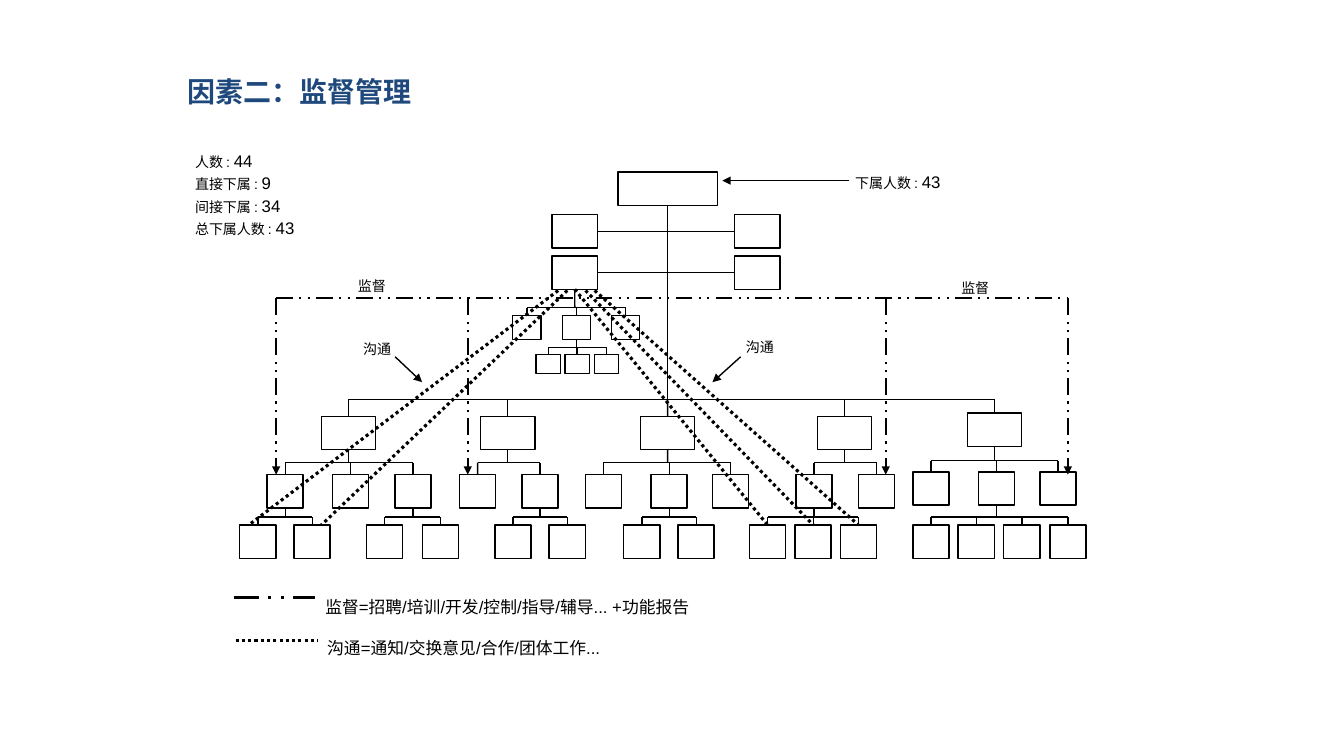
import dataclasses
from typing import Any, NamedTuple, Optional, Union

import pptx
import pptx.dml.color
import pptx.enum.dml
import pptx.enum.shapes
import pptx.enum.text
import pptx.oxml.ns
import pptx.util
from lxml import etree

Cm = pptx.util.Cm
Pt = pptx.util.Pt
Dash = pptx.enum.dml.MSO_LINE
Align = pptx.enum.text.PP_ALIGN
Anchor = pptx.enum.text.MSO_ANCHOR
qn = pptx.oxml.ns.qn


@dataclasses.dataclass(frozen=True)
class Theme:
    ink: str = "000000"
    paper: str = "FFFFFF"
    heading: str = "1F497D"
    body_font: str = "Arial"
    heading_font: str = "Noto Sans CJK SC"
    heading_size: int = 20
    figure_size: int = 12
    label_size: int = 10


@dataclasses.dataclass(frozen=True)
class Tier:
    top: float
    width: float
    height: float
    bar: float = 0


@dataclasses.dataclass(frozen=True)
class Unit:
    tier: Tier
    centre: float
    reports: tuple["Unit", ...] = ()


@dataclasses.dataclass(frozen=True)
class Stroke:
    width: float = 1
    dash: Optional[Any] = None
    arrow: bool = False


@dataclasses.dataclass(frozen=True)
class Caption:
    left: float
    top: float
    width: float
    height: float
    lines: tuple[tuple[str, str], ...]
    size: int
    font: str
    color: str
    bold: bool = False
    wrap: bool = True
    align: Any = Align.LEFT
    anchor: Any = Anchor.MIDDLE
    spacing: Optional[float] = None
    gap: float = 0


class Point(NamedTuple):
    x: float
    y: float


class Joint(NamedTuple):
    unit: Unit
    site: int


THEME = Theme()
TOP, LEFT, BOTTOM, RIGHT = range(4)

CHIEF = Tier(4.34, 2.51, 0.84)
AIDE = Tier(5.41, 1.14, 0.84)
DEPUTY = dataclasses.replace(AIDE, top=6.45)
STAFF = Tier(7.95, 0.71, 0.61, 7.75)
CLERK = Tier(8.94, 0.61, 0.48, 8.76)
LEAD = Tier(10.49, 1.37, 0.84, 10.06)
MEMBER = Tier(11.96, 0.91, 0.84, 11.66)
HIGH_LEAD = dataclasses.replace(LEAD, top=10.41)
HIGH_MEMBER = dataclasses.replace(MEMBER, top=11.89, bar=11.61)
CREW = Tier(13.23, 0.91, 0.84, 13.03)


def row(tier: Tier, *centres: float) -> tuple[Unit, ...]:
    return tuple(Unit(tier, centre) for centre in centres)


CONTACTS = row(CREW, 19.35, 20.5, 21.64)
DEPARTMENTS = (
    Unit(LEAD, 8.79, (Unit(MEMBER, 7.19, row(CREW, 6.5, 7.87)), Unit(MEMBER, 8.84),
                      Unit(MEMBER, 10.41, row(CREW, 9.7, 11.1)))),
    Unit(LEAD, 12.8, (Unit(MEMBER, 12.04), Unit(MEMBER, 13.61, row(CREW, 12.93, 14.3)))),
    Unit(LEAD, 16.83, (Unit(MEMBER, 15.21), Unit(MEMBER, 16.87, row(CREW, 16.18, 17.55)),
                       Unit(MEMBER, 18.42))),
    Unit(LEAD, 21.29, (Unit(MEMBER, 20.52, CONTACTS), Unit(MEMBER, 22.1))),
    Unit(HIGH_LEAD, 25.07, (Unit(HIGH_MEMBER, 23.47),
                            Unit(HIGH_MEMBER, 25.12, row(CREW, 23.47, 24.61, 25.76, 26.92)),
                            Unit(HIGH_MEMBER, 26.67))),
)
ORGANISATION = Unit(CHIEF, 16.83, DEPARTMENTS)
SUPERVISOR = Unit(DEPUTY, 14.49, (
    Unit(STAFF, 13.28), Unit(STAFF, 14.53, row(CLERK, 13.82, 14.55, 15.29)), Unit(STAFF, 15.77)))
AIDE_PAIRS = ((Unit(AIDE, 14.49), Unit(AIDE, 19.09)), (SUPERVISOR, Unit(DEPUTY, 19.09)))

SOLID = Stroke()
POINTER = Stroke(arrow=True)
SUPERVISION = Stroke(1.5, Dash.DASH_DOT_DOT)
SUPERVISION_ARROW = dataclasses.replace(SUPERVISION, arrow=True)
SUPERVISION_KEY = dataclasses.replace(SUPERVISION, width=2.25)
COMMUNICATION = Stroke(2.25, Dash.ROUND_DOT)

SUPERVISION_Y = 7.52
SUPERVISED_X = (6.96, 11.79, 22.33, 26.92)


def body(left: float, top: float, width: float, height: float,
         *lines: tuple[str, str], size: int = THEME.label_size, **options: Any) -> Caption:
    return Caption(left, top, width, height, lines, size, THEME.body_font, THEME.ink, **options)


def label(left: float, top: float, text: str) -> Caption:
    return body(left, top, 1.27, 0.69, (text, ""), wrap=False, align=Align.CENTER)


CAPTIONS = (
    Caption(4.47, 1.75, 10.06, 1.37, (("因素二：监督管理", ""),), THEME.heading_size,
            THEME.heading_font, THEME.heading, bold=True, anchor=Anchor.TOP),
    label(8.74, 6.86, "监督"),
    label(23.95, 6.91, "监督"),
    label(18.52, 8.41, "沟通 "),
    label(8.87, 8.46, "沟通 "),
    body(7.95, 14.91, 20.19, 0.76, ("监督=招聘/培训/开发/控制/指导/辅导... +功能报告", ""),
         size=THEME.figure_size),
    body(8, 15.95, 16.92, 0.76, ("沟通=通知/交换意见/合作/团体工作...", ""), size=THEME.figure_size),
    body(4.67, 3.73, 7.57, 2.46, ("人数 : ", "44"), ("直接下属 : ", "9"),
         ("间接下属 : ", "34"), ("总下属人数 : ", "43"), spacing=0.7, gap=6),
    body(21.31, 4.42, 2.74, 0.51, ("下属人数 : ", "43"), wrap=False, spacing=0.5),
)


def rgb(value: str) -> Any:
    return pptx.dml.color.RGBColor.from_string(value)


def draw_box(shapes: Any, unit: Unit, boxes: dict[Unit, Any]) -> None:
    tier = unit.tier
    box = shapes.add_shape(pptx.enum.shapes.MSO_SHAPE.RECTANGLE, Cm(unit.centre - tier.width / 2),
                           Cm(tier.top), Cm(tier.width), Cm(tier.height))
    box.shadow.inherit = False
    box.fill.solid()
    box.fill.fore_color.rgb = rgb(THEME.paper)
    box.line.color.rgb = rgb(THEME.ink)
    box.line.width = Pt(1)
    boxes[unit] = box


def draw_line(shapes: Any, start: Union[Point, Joint], finish: Union[Point, Joint],
              stroke: Stroke, boxes: dict[Unit, Any]) -> None:
    ends = [Cm(value) if isinstance(end, Point) else 0 for end in (start, finish) for value in end]
    line = shapes.add_connector(pptx.enum.shapes.MSO_CONNECTOR.STRAIGHT, *ends)
    for end, join in ((start, line.begin_connect), (finish, line.end_connect)):
        if isinstance(end, Joint):
            join(boxes[end.unit], end.site)
    line.line.color.rgb = rgb(THEME.ink)
    line.line.width = Pt(stroke.width)
    if stroke.dash is not None:
        line.line.dash_style = stroke.dash
    properties = line._element.spPr
    if stroke.arrow:
        etree.SubElement(properties.find(qn("a:ln")), qn("a:tailEnd"), type="triangle")
    etree.SubElement(properties, qn("a:effectLst"))


def draw_branch(shapes: Any, unit: Unit, boxes: dict[Unit, Any]) -> None:
    draw_box(shapes, unit, boxes)
    if not unit.reports:
        return
    bar = unit.reports[0].tier.bar
    first, last = unit.reports[0].centre, unit.reports[-1].centre
    draw_line(shapes, Joint(unit, BOTTOM), Point(unit.centre, bar), SOLID, boxes)
    draw_line(shapes, Point(first, bar), Point(last, bar), SOLID, boxes)
    for report in unit.reports:
        draw_branch(shapes, report, boxes)
        draw_line(shapes, Point(report.centre, bar), Joint(report, TOP), SOLID, boxes)


def draw_caption(shapes: Any, caption: Caption) -> None:
    frame = shapes.add_textbox(Cm(caption.left), Cm(caption.top),
                               Cm(caption.width), Cm(caption.height)).text_frame
    frame.word_wrap = caption.wrap
    frame.vertical_anchor = caption.anchor
    for index, (text, figure) in enumerate(caption.lines):
        paragraph = frame.add_paragraph() if index else frame.paragraphs[0]
        paragraph.alignment = caption.align
        paragraph.line_spacing = caption.spacing
        paragraph.space_before = Pt(caption.gap)
        font = paragraph.font
        font.name, font.size, font.bold = caption.font, Pt(caption.size), caption.bold
        font.color.rgb = rgb(caption.color)
        east_asian = etree.SubElement(paragraph._p.pPr.find(qn("a:defRPr")), qn("a:ea"))
        east_asian.set("typeface", THEME.heading_font)
        paragraph.add_run().text = text
        if figure:
            number = paragraph.add_run()
            number.text = figure
            number.font.size = Pt(THEME.figure_size)


def main() -> None:
    deck = pptx.Presentation()
    deck.slide_width, deck.slide_height = Cm(33.88), Cm(19.05)
    shapes = deck.slides.add_slide(deck.slide_layouts[6]).shapes
    boxes: dict[Unit, Any] = {}

    draw_branch(shapes, ORGANISATION, boxes)
    for left_aide, right_aide in AIDE_PAIRS:
        draw_branch(shapes, left_aide, boxes)
        draw_branch(shapes, right_aide, boxes)
        draw_line(shapes, Joint(left_aide, RIGHT), Joint(right_aide, LEFT), SOLID, boxes)

    links = [(Point(SUPERVISED_X[0], SUPERVISION_Y), Point(SUPERVISED_X[-1], SUPERVISION_Y), SUPERVISION)]
    links += [(Point(x, SUPERVISION_Y), Point(x, MEMBER.top), SUPERVISION_ARROW) for x in SUPERVISED_X]
    links += [
        (Point(14.07, 7.32), Point(6.27, CREW.top), COMMUNICATION),
        (Point(14.3, 7.32), Point(8.1, CREW.top), COMMUNICATION),
        (Joint(SUPERVISOR, BOTTOM), Joint(CONTACTS[0], TOP), COMMUNICATION),
        (Point(14.76, 7.32), Joint(CONTACTS[1], TOP), COMMUNICATION),
        (Point(14.99, 7.32), Joint(CONTACTS[2], TOP), COMMUNICATION),
        (Point(18.67, 8.99), Point(17.96, 9.63), POINTER),
        (Point(9.96, 8.99), Point(10.64, 9.63), POINTER),
        (Point(21.41, 4.55), Point(18.21, 4.55), POINTER),
        (Point(5.89, 15.06), Point(7.95, 15.06), SUPERVISION_KEY),
        (Point(5.94, 16.13), Point(8, 16.13), COMMUNICATION),
    ]
    for start, finish, stroke in links:
        draw_line(shapes, start, finish, stroke, boxes)
    for caption in CAPTIONS:
        draw_caption(shapes, caption)
    deck.save("out.pptx")


if __name__ == "__main__":
    main()
